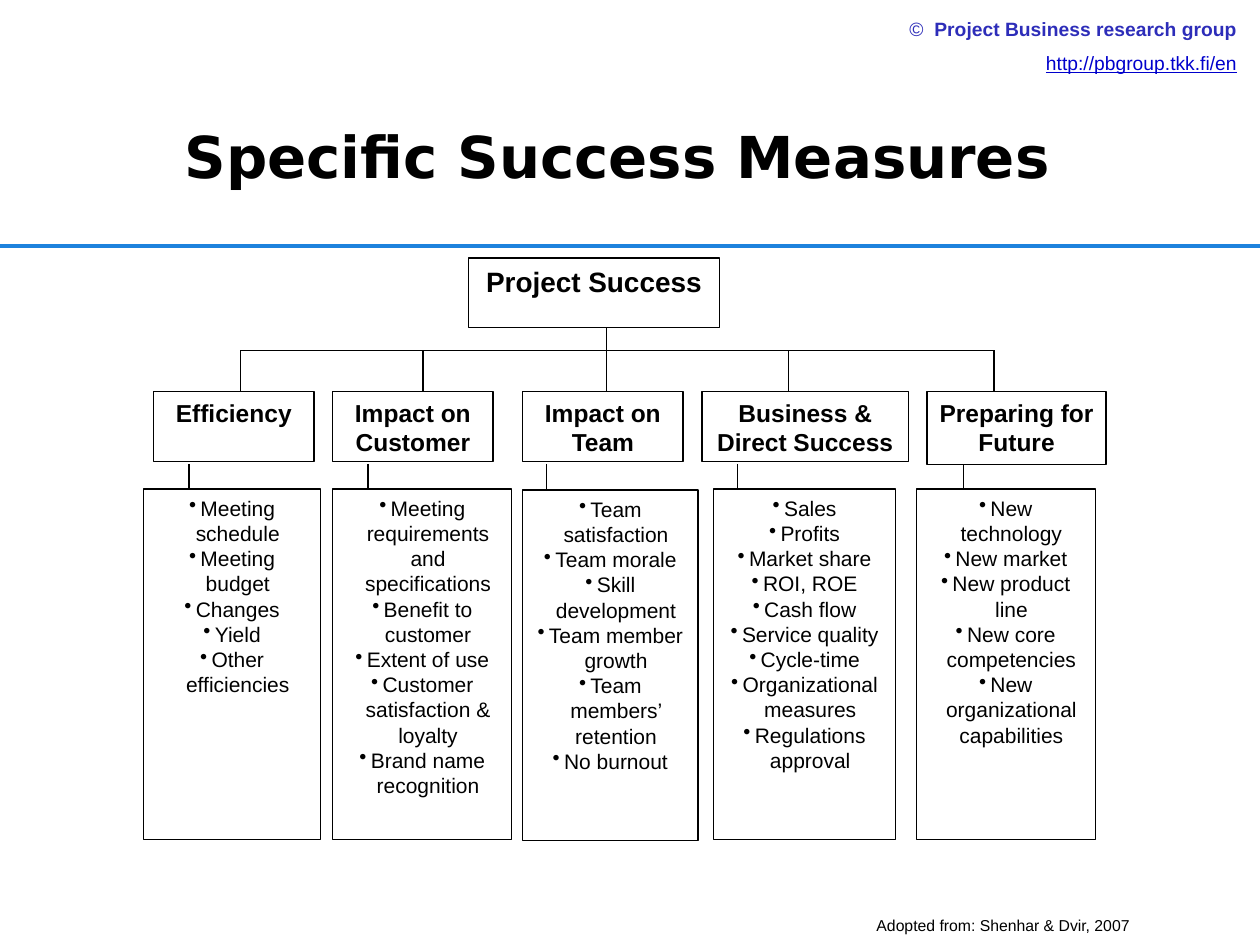
from pptx import Presentation
from pptx import util as u
from pptx.dml.color import RGBColor
from pptx.enum import shapes, text
from pptx.oxml.ns import qn
from lxml import etree

BLACK, WHITE, BLUE = "000000", "FFFFFF", "1D82DD"
CENTER, RIGHT = text.PP_ALIGN.CENTER, text.PP_ALIGN.RIGHT

# heading lines, heading (left, width, height), list (left, top, width), branch x, stub x, measures
COLUMNS = [
    (["Efficiency"], (3.1, 3.23, 1.4), (2.9, 9.86, 3.56), 4.85, 3.81,
     ["Meeting schedule", "Meeting budget", "Changes", "Yield",
      "Other efficiencies"]),
    (["Impact on", "Customer"], (6.71, 3.23, 1.4), (6.71, 9.86, 3.61), 8.53, 7.42,
     ["Meeting requirements and specifications", "Benefit to customer",
      "Extent of use", "Customer satisfaction & loyalty",
      "Brand name recognition"]),
    (["Impact on", "Team"], (10.54, 3.23, 1.4), (10.54, 9.88, 3.53), 12.22, 11.02,
     ["Team satisfaction", "Team morale", "Skill development",
      "Team member growth", "Team members’ retention", "No burnout"]),
    (["Business & Direct Success"], (14.15, 4.17, 1.4), (14.38, 9.86, 3.68), 15.9, 14.86,
     ["Sales", "Profits", "Market share", "ROI, ROE", "Cash flow",
      "Service quality", "Cycle-time", "Organizational measures",
      "Regulations approval"]),
    (["Preparing for Future"], (18.69, 3.61, 1.47), (18.47, 9.86, 3.61), 20.04, 19.43,
     ["New technology", "New market", "New product line",
      "New core competencies", "New organizational capabilities"]),
]
ROOT_X, ROOT_BOTTOM, BRANCH_Y, HEAD_Y = 12.22, 6.6, 7.06, 7.9
STUB_Y, LIST_Y, LIST_H = 9.35, 9.86, 7.06


def rgb(value):
    return RGBColor.from_string(value)


def add_bullet(p, indent):
    """Give the paragraph a hanging bullet; indent is in cm."""
    pPr = p._p.get_or_add_pPr()
    pPr.set("marL", str(u.Cm(indent)))
    pPr.set("indent", str(-u.Cm(indent)))
    etree.SubElement(pPr, qn("a:buChar")).set("char", "•")


def write(p, content, size=12, bold=False, color=BLACK, font="Arial",
          align=CENTER, underline=None, bullet=False):
    """Add a formatted run to a paragraph."""
    if bullet:
        add_bullet(p, 0.23)
    p.alignment = align
    r = p.add_run()
    r.text = content
    f = r.font
    f.name, f.size, f.bold, f.underline = font, u.Pt(size), bold, underline
    f.color.rgb = rgb(color)


class Deck:
    def __init__(self):
        self.prs = Presentation()
        self.prs.slide_width, self.prs.slide_height = u.Cm(25.4), u.Cm(19.05)
        self.s = self.prs.slides.add_slide(self.prs.slide_layouts[5])

    def title(self, content, x, y, w, h, **fmt):
        sp = self.s.shapes.title
        sp.left, sp.top, sp.width, sp.height = map(u.Cm, (x, y, w, h))
        tf = sp.text_frame
        tf.auto_size = text.MSO_AUTO_SIZE.NONE
        tf.vertical_anchor = text.MSO_ANCHOR.MIDDLE
        write(tf.paragraphs[0], content, **fmt)

    def line(self, x1, y1, x2, y2, color=BLACK, width=0.75):
        c = self.s.shapes.add_connector(
            shapes.MSO_CONNECTOR.STRAIGHT, *map(u.Cm, (x1, y1, x2, y2)))
        c.line.color.rgb = rgb(color)
        c.line.width = u.Pt(width)
        etree.SubElement(c._element.spPr, qn("a:effectLst"))

    def box(self, lines, x, y, w, h, **fmt):
        sp = self.s.shapes.add_shape(
            shapes.MSO_SHAPE.RECTANGLE, *map(u.Cm, (x, y, w, h)))
        sp.shadow.inherit = False
        sp.fill.solid()
        sp.fill.fore_color.rgb = rgb(WHITE)
        sp.line.color.rgb = rgb(BLACK)
        sp.line.width = u.Pt(0.75)
        tf = sp.text_frame
        tf.word_wrap = True
        tf.vertical_anchor = text.MSO_ANCHOR.TOP
        for i, content in enumerate(lines):
            write(tf.add_paragraph() if i else tf.paragraphs[0], content, **fmt)

    def text_box(self, x, y, w, h, wrap=True):
        tf = self.s.shapes.add_textbox(*map(u.Cm, (x, y, w, h))).text_frame
        tf.word_wrap = wrap
        return tf


def main():
    deck = Deck()
    deck.line(0, 4.95, 25.4, 4.95, color=BLUE, width=2.25)

    tf = deck.text_box(17.27, 0.23, 7.92, 1.42)
    p = tf.paragraphs[0]
    write(p, "©  ", size=11, color="2D2DB9", align=RIGHT)
    write(p, "Project Business research group", size=11, bold=True,
          color="2D2DB9", align=RIGHT)
    p = tf.add_paragraph()
    p.space_before = u.Pt(6)
    write(p, "http://pbgroup.tkk.fi/en", size=11, color="0000CC",
          align=RIGHT, underline=True)

    deck.title("Specific Success Measures", 1.65, 1.73, 21.59, 2.82,
               size=33, bold=True, font="DejaVu Sans")

    deck.line(ROOT_X, ROOT_BOTTOM, ROOT_X, BRANCH_Y)
    deck.line(COLUMNS[0][3], BRANCH_Y, COLUMNS[-1][3], BRANCH_Y)
    deck.box(["Project Success"], 9.45, 5.2, 5.05, 1.4, size=16, bold=True)

    for heading, head, (list_x, list_y, list_w), branch_x, stub_x, measures in COLUMNS:
        head_x, head_w, head_h = head
        deck.line(branch_x, BRANCH_Y, branch_x, HEAD_Y)
        deck.line(stub_x, STUB_Y, stub_x, LIST_Y)
        deck.box(heading, head_x, HEAD_Y, head_w, head_h, size=14, bold=True)
        deck.box(measures, list_x, list_y, list_w, LIST_H, bullet=True)

    tf = deck.text_box(17.4, 18.34, 5.64, 0.64, wrap=False)
    write(tf.paragraphs[0], "Adopted from: Shenhar & Dvir, 2007", size=9)

    deck.prs.save("out.pptx")


if __name__ == "__main__":
    main()
